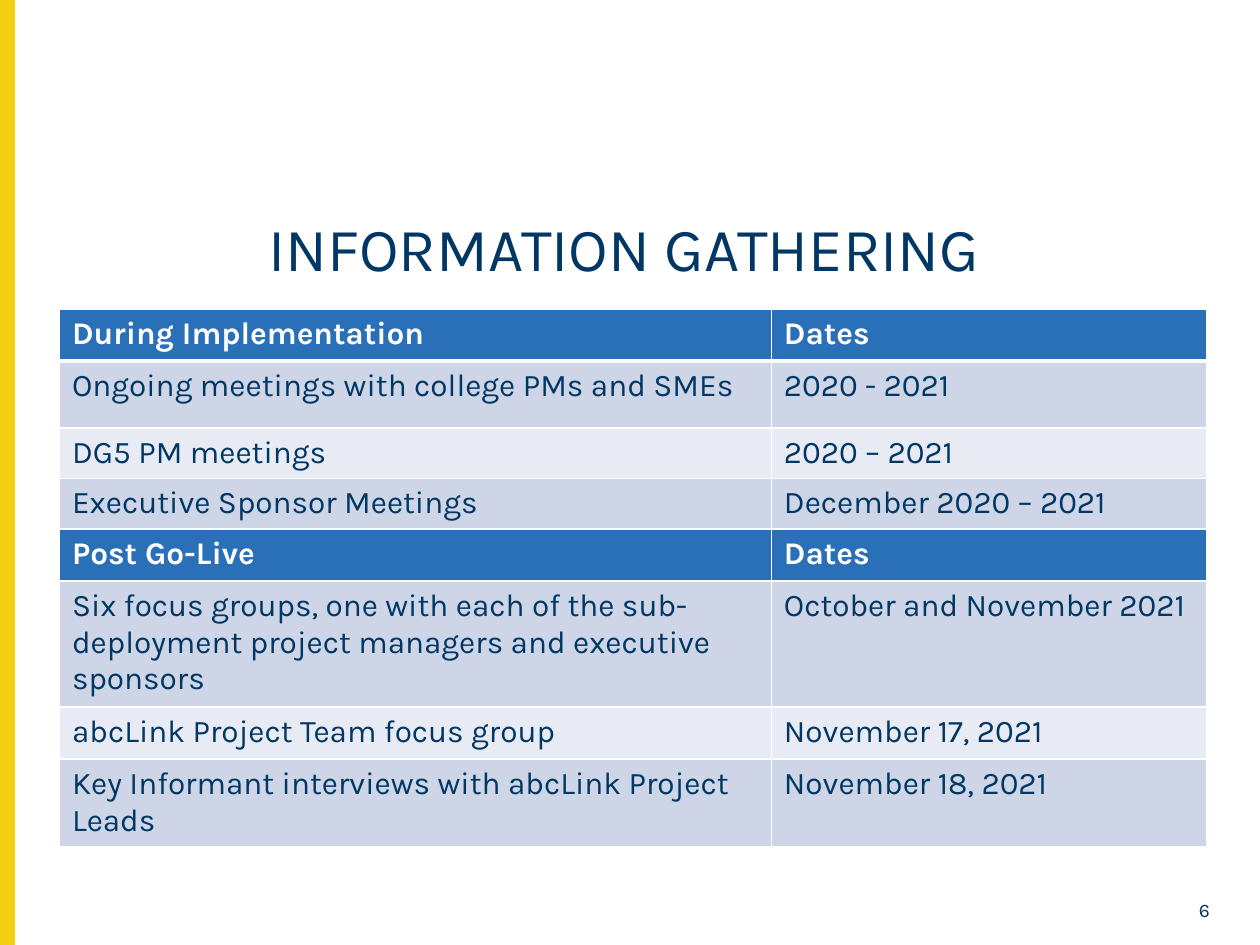
from typing import NamedTuple

from lxml.etree import SubElement
from pptx import Presentation
from pptx.dml.color import RGBColor
from pptx.enum.shapes import MSO_SHAPE as Shape
from pptx.enum.text import MSO_ANCHOR as Anchor, PP_ALIGN as Align
from pptx.oxml.ns import qn
from pptx.util import Pt

FONT = "Karla"
NAVY, BLUE, YELLOW, WHITE = "003764", "2A70B8", "F4CE12", "FFFFFF"
BAND_DARK, BAND_LIGHT = "CDD5E6", "E8EBF3"


class Row(NamedTuple):
    activity: str
    dates: str
    height: float
    fill: str

    @property
    def is_heading(self) -> bool:
        return self.fill == BLUE


ROWS = [
    Row("During Implementation", "Dates", 29.7, BLUE),
    Row("Ongoing meetings with college PMs and SMEs", "2020 - 2021", 38.3, BAND_DARK),
    Row("DG5 PM meetings", "2020 – 2021", 28.9, BAND_LIGHT),
    Row("Executive Sponsor Meetings", "December 2020 – 2021", 28.5, BAND_DARK),
    Row("Post Go-Live", "Dates", 29.7, BLUE),
    Row("Six focus groups, one with each of the sub-deployment project managers "
        "and executive sponsors", "October and November 2021", 70.7, BAND_DARK),
    Row("abcLink Project Team focus group", "November 17, 2021", 29.7, BAND_LIGHT),
    Row("Key Informant interviews with abcLink Project Leads", "November 18, 2021",
        49.1, BAND_DARK),
]
COLUMN_WIDTHS = (406.8, 248.8)


def rgb(value: str) -> RGBColor:
    return RGBColor.from_string(value)


def add_run(p, text: str, size: float, color: str = NAVY, bold: bool = False) -> None:
    r = p.add_run()
    r.text = text
    r.font.name, r.font.size, r.font.bold = FONT, Pt(size), bold
    r.font.color.rgb = rgb(color)


def add_text(s, x: float, y: float, w: float, h: float, text: str, size: float,
             align=Align.LEFT, spacing: float = 1.0) -> None:
    tf = s.shapes.add_textbox(Pt(x), Pt(y), Pt(w), Pt(h)).text_frame
    tf.word_wrap = True
    tf.vertical_anchor = Anchor.MIDDLE
    p = tf.paragraphs[0]
    p.alignment, p.line_spacing = align, spacing
    add_run(p, text, size)


def set_borders(cell, bottom: float) -> None:
    """Put white lines around a cell, ahead of its fill as the schema requires."""
    tc_pr = cell._tc.get_or_add_tcPr()
    for side, width in (("L", 1), ("R", 1), ("T", 1), ("B", bottom)):
        ln = SubElement(tc_pr, qn(f"a:ln{side}"), w=str(Pt(width)))
        SubElement(SubElement(ln, qn("a:solidFill")), qn("a:srgbClr"), val=WHITE)


def add_schedule(s, x: float, y: float) -> None:
    frame = s.shapes.add_table(len(ROWS), len(COLUMN_WIDTHS), Pt(x), Pt(y),
                               Pt(sum(COLUMN_WIDTHS)), Pt(sum(r.height for r in ROWS)))
    table = frame.table
    for column, width in zip(table.columns, COLUMN_WIDTHS):
        column.width = Pt(width)
    for i, row in enumerate(ROWS):
        table.rows[i].height = Pt(row.height)
        for cell, text in zip(table.rows[i].cells, (row.activity, row.dates)):
            set_borders(cell, bottom=3 if i == 0 else 1)
            cell.fill.solid()
            cell.fill.fore_color.rgb = rgb(row.fill)
            add_run(cell.text_frame.paragraphs[0], text, 18,
                    WHITE if row.is_heading else NAVY, row.is_heading)


def add_side_bar(s) -> None:
    sp = s.shapes.add_shape(Shape.RECTANGLE, Pt(0), Pt(0), Pt(8), Pt(540))
    sp.shadow.inherit = False
    sp.fill.solid()
    sp.fill.fore_color.rgb = rgb(YELLOW)
    sp.line.color.rgb = rgb(YELLOW)
    sp.line.width = Pt(1)


def main() -> None:
    prs = Presentation()
    prs.slide_width, prs.slide_height = Pt(720), Pt(540)
    s = prs.slides.add_slide(prs.slide_layouts[6])
    add_side_bar(s)
    add_text(s, 146.2, 122.4, 430.6, 43.2, "INFORMATION GATHERING", 35, spacing=0.9)
    add_schedule(s, 34, 176.5)
    add_text(s, 661.7, 510.5, 36.7, 18.7, "6", 11, Align.RIGHT)
    prs.save("out.pptx")


if __name__ == "__main__":
    main()
